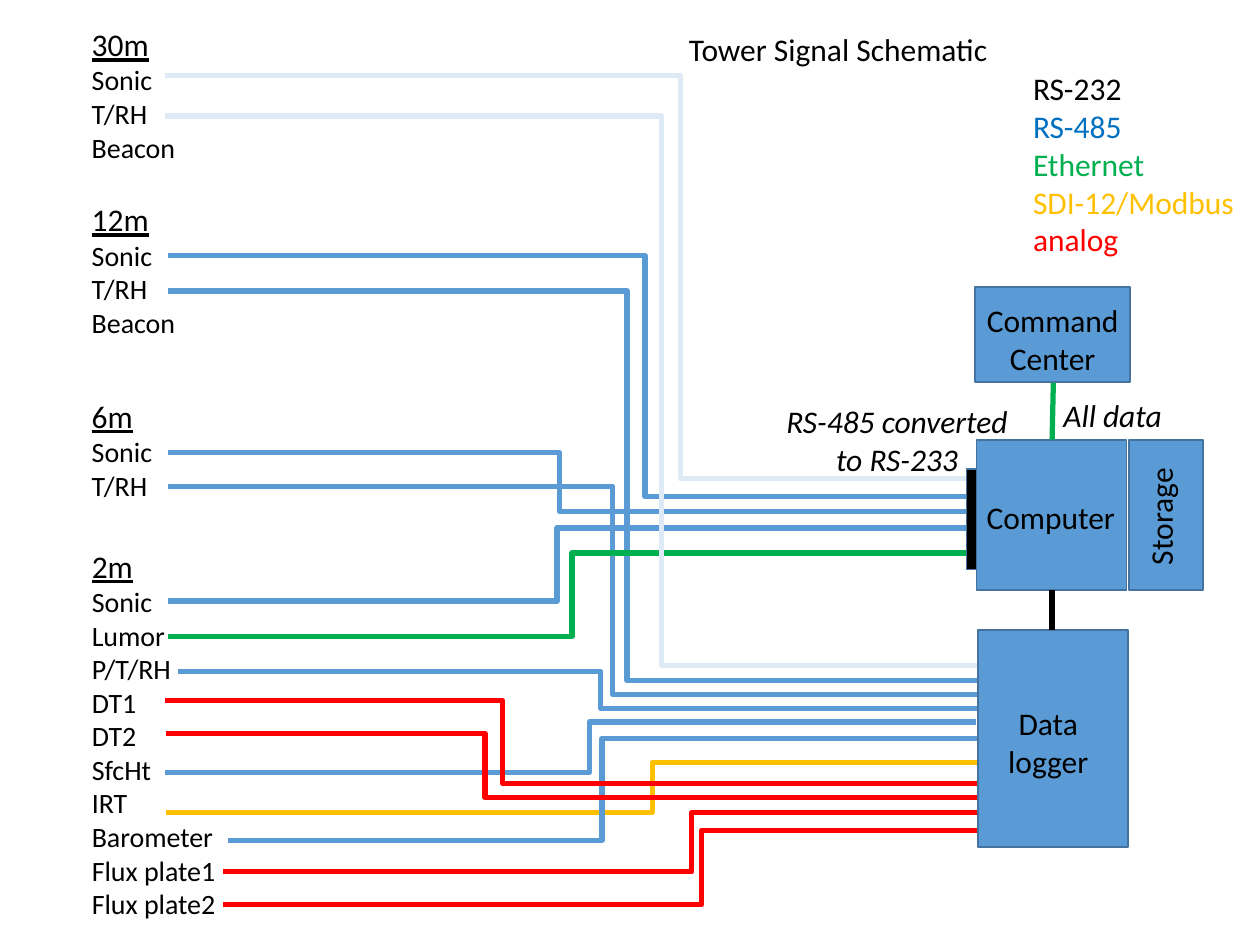
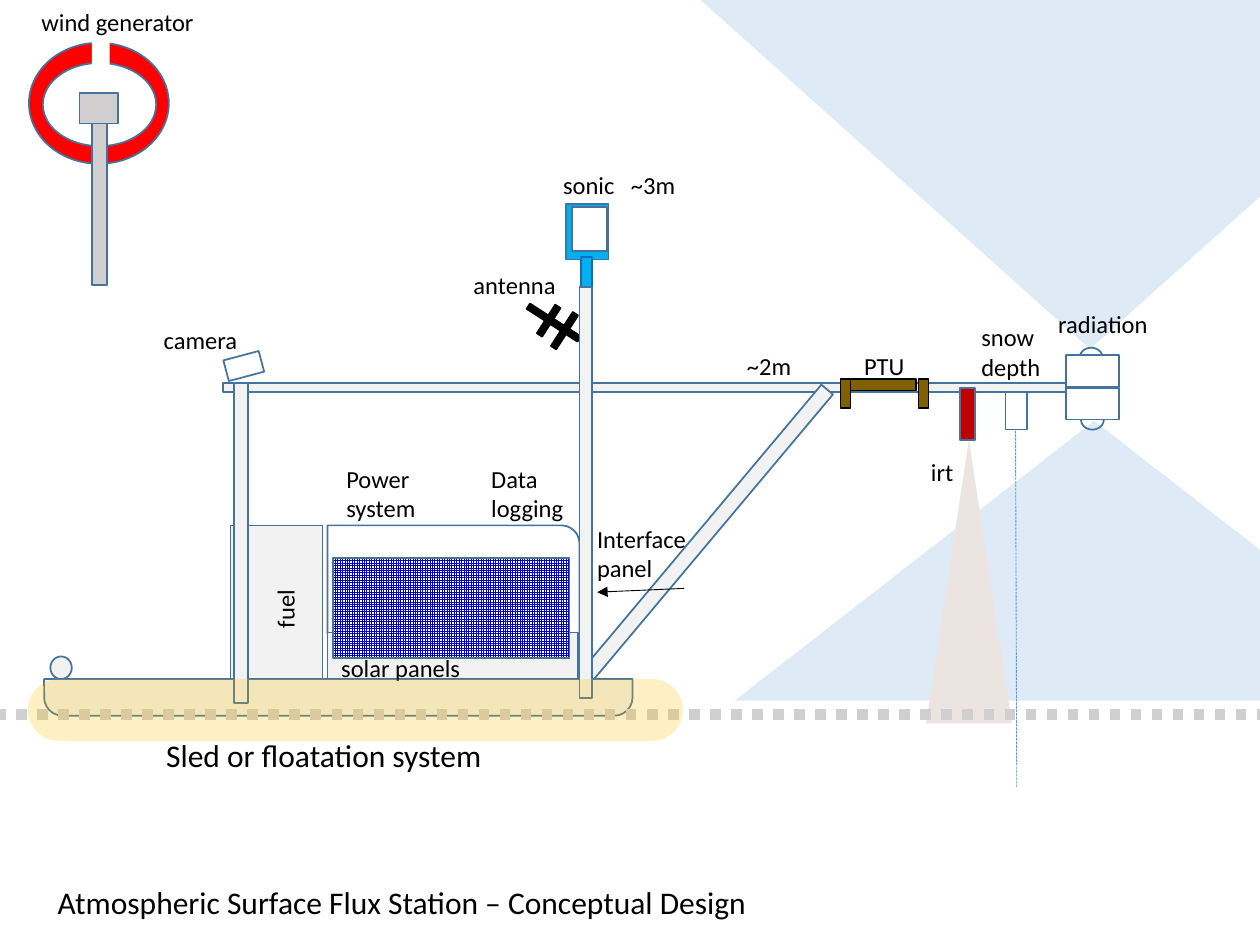
import collections
import pptx
import pptx.dml.color
import pptx.enum.dml
import pptx.enum.shapes
import pptx.enum.text
import pptx.oxml
import pptx.oxml.ns
import pptx.util

Inches = pptx.util.Inches
Pt = pptx.util.Pt
MSO = pptx.enum.shapes.MSO_SHAPE
DASH = pptx.enum.dml.MSO_LINE
CENTER = pptx.enum.text.PP_ALIGN.CENTER
FONT = "Calibri"
COLORS = {
    "black": "000000", "white": "FFFFFF", "blue": "5B9BD5", "edge": "43739E",
    "pale": "DEEBF7", "signal": "0070C0", "green": "00B050", "amber": "FFC000",
    "red": "FF0000", "steel": "F2F2F2", "gray": "D0CECE", "beam": "EBE4E1",
    "crimson": "C00000", "cyan": "00B0F0", "brown": "806000", "grid": "0000CC",
}
Region = collections.namedtuple("Region", "shapes left top")


def rgb(name):
    return pptx.dml.color.RGBColor.from_string(COLORS[name])


def add_xml(parent, tag, **attrs):
    el = pptx.oxml.parse_xml(f"<a:{tag} {pptx.oxml.ns.nsdecls('a')}/>")
    for key, value in attrs.items():
        el.set(key, value)
    parent.append(el)
    return el


def place(reg, x, y, w, h):
    return Inches(reg.left + x), Inches(reg.top + y), Inches(w), Inches(h)


def group(reg):
    return reg._replace(shapes=reg.shapes.add_group_shape().shapes)


def shape(reg, kind, box, fill=None, line="edge", rot=0, adj=()):
    sp = reg.shapes.add_shape(kind, *place(reg, *box))
    sp.shadow.inherit = False
    sp.rotation = rot
    for i, value in enumerate(adj):
        sp.adjustments[i] = value
    if fill:
        sp.fill.solid()
        sp.fill.fore_color.rgb = rgb(fill)
    else:
        sp.fill.background()
    if line:
        sp.line.color.rgb = rgb(line)
        sp.line.width = Pt(1)
    else:
        sp.line.fill.background()
    return sp


def label(reg, box, lines, size=14, wrap=False, align=None, italic=False, rot=0):
    sp = reg.shapes.add_textbox(*place(reg, *box))
    sp.rotation = rot
    tf = sp.text_frame
    tf.word_wrap = wrap
    tf.auto_size = pptx.enum.text.MSO_AUTO_SIZE.SHAPE_TO_FIT_TEXT
    for i, text in enumerate(lines):
        p = tf.add_paragraph() if i else tf.paragraphs[0]
        p.alignment = align
        r = p.add_run()
        r.text = text
        r.font.name = FONT
        r.font.size = Pt(size)
        r.font.italic = italic or None
        r.font.color.rgb = rgb("black")
    return tf


def connect(reg, x1, y1, x2, y2, color, width=3, bend=None, dash=None):
    kinds = pptx.enum.shapes.MSO_CONNECTOR
    kind = kinds.STRAIGHT if bend is None else kinds.ELBOW
    ends = (Inches(reg.left + x1), Inches(reg.top + y1),
            Inches(reg.left + x2), Inches(reg.top + y2))
    cx = reg.shapes.add_connector(kind, *ends)
    cx.line.color.rgb = rgb(color)
    cx.line.width = Pt(width)
    if dash:
        cx.line.dash_style = dash
    sp_pr = cx._element.spPr
    add_xml(sp_pr, "effectLst")
    if bend is not None:
        share = round((bend - x1) / (x2 - x1) * 100000)
        av = sp_pr.find(pptx.oxml.ns.qn("a:prstGeom")).get_or_add_avLst()
        add_xml(av, "gd", name="adj1", fmla=f"val {share}")
    return cx


def tower_levels(reg):
    levels = [
        (0, 0.87, ["30m", "Sonic", "T/RH", "Beacon"]),
        (1.39, 0.87, ["12m", "Sonic", "T/RH", "Beacon"]),
        (2.95, 0.7, ["6m", "Sonic", "T/RH"]),
        (4.14, 1.19, ["2m", "Sonic", "Lumor", "P/T/RH", "DT1", "DT2", "SfcHt",
                      "IRT", "Barometer", "Flux plate1", "Flux plate2"]),
    ]
    for y, w, lines in levels:
        h = 0.4 + 0.27 * (len(lines) - 1)
        tf = label(reg, (0, y, w, h), lines, 16)
        height = tf.paragraphs[0].runs[0].font
        height.size = Pt(18)
        height.underline = True


def signal_wires(reg):
    wires = [
        (0.02, 1.43, 3.81, 6.43, 3.34, "blue"),
        (0.02, 4.17, 3.11, 6.46, 3.59, "blue"),
        (0.02, 2.99, 3.13, 6.46, 3.46, "blue"),
        (0.02, 3.26, 3.55, 6.44, 4.91, "blue"),
        (0.02, 1.71, 3.67, 6.51, 4.8, "blue"),
        (0.1, 4.73, 3.46, 6.46, 5.02, "blue"),
        (0.02, 4.45, 3.23, 6.44, 3.79, "green"),
        (0.01, 5.85, 3.87, 6.46, 5.45, "amber"),
        (0, 5.53, 3.37, 6.44, 5.13, "blue"),
        (0.5, 6.07, 3.47, 6.45, 5.26, "blue"),
        (0.01, 5.22, 2.54, 6.46, 5.73, "red"),
        (0, 4.96, 2.68, 6.46, 5.62, "red"),
        (0.46, 6.58, 4.26, 6.46, 5.99, "red"),
        (0.46, 6.32, 4.18, 6.52, 5.85, "red"),
        (0, 0, 4.09, 6.44, 3.2, "pale"),
        (0, 0.32, 3.94, 6.46, 4.68, "pale"),
    ]
    for x1, y1, bend, x2, y2, color in wires:
        connect(reg, x1, y1, x2, y2, color, bend=bend)


def protocol_legend(reg):
    protocols = {"RS-232": "black", "RS-485": "signal", "Ethernet": "green",
                 "SDI-12/Modbus": "amber", "analog": "red"}
    tf = label(reg, (0, 0, 1.81, 1.62), protocols, 18)
    for p, color in zip(tf.paragraphs, protocols.values()):
        p.runs[0].font.color.rgb = rgb(color)


def equipment(reg):
    blocks = [
        ((1.62, 0, 1.23, 0.75), "blue"),
        ((1.63, 1.21, 1.19, 1.19), "blue"),
        ((1.64, 2.72, 1.19, 1.72), "blue"),
        ((1.55, 1.44, 0.08, 0.8), "black"),
        ((2.84, 1.21, 0.59, 1.19), "blue"),
    ]
    for box, fill in blocks:
        shape(reg, MSO.RECTANGLE, box, fill)
    connect(reg, 2.24, 0.76, 2.23, 1.21, "green")
    connect(reg, 2.23, 2.4, 2.23, 2.72, "black")
    captions = [
        ((1.61, 0.06, 1.25, 0.71), "Command Center", False, 0),
        ((1.59, 3.26, 1.22, 0.71), "Data logger", False, 0),
        ((2.12, 0.81, 1.18, 0.4), "All data", True, 0),
        ((1.53, 1.62, 1.38, 0.4), "Computer", False, 0),
        ((2.4, 1.62, 1.38, 0.4), "Storage", False, 270),
        ((0, 0.86, 2, 0.71), "RS-485 converted to RS-233", True, 0),
    ]
    for box, text, italic, rot in captions:
        label(reg, box, [text], 18, True, CENTER, italic, rot)


def radiation_cones(reg):
    shape(reg, MSO.ISOSCELES_TRIANGLE, (0.27, 3.34, 5.71, 2.22), "pale", None)
    shape(reg, MSO.ISOSCELES_TRIANGLE, (0, 0, 6.18, 2.77), "pale", None, 180)


def boom(reg):
    shape(reg, MSO.RECTANGLE, (0, 0, 6.69, 0.07), "steel")
    shape(reg, MSO.RECTANGLE, (2.29, 1.16, 3.05, 0.12), "steel", rot=310)
    label(reg, (4.06, -0.3, 0.56, 0.34), ["~2m"])


def sled(reg):
    shape(reg, MSO.ROUND_2_SAME_RECTANGLE, (0, 0.18, 4.67, 0.29), "steel",
          rot=180, adj=(0.5, 0))
    shape(reg, MSO.OVAL, (0.05, 0, 0.17, 0.18), "steel")
    label(reg, (0.87, 0.58, 2.82, 0.4), ["Sled or floatation system"], 18, True)


def cabin(reg):
    shape(reg, MSO.ROUND_1_RECTANGLE, (0.77, 0, 2, 0.86))
    shape(reg, MSO.RECTANGLE, (0.77, 0.85, 1.99, 0.37), "steel")
    panel = shape(reg, MSO.RECTANGLE, (0.81, 0.26, 1.88, 0.79))
    panel.fill.patterned()
    panel.fill.pattern = pptx.enum.dml.MSO_PATTERN.SMALL_GRID
    panel.fill.fore_color.rgb = rgb("grid")
    panel.fill.back_color.rgb = rgb("white")
    shape(reg, MSO.RECTANGLE, (0, 0, 0.73, 1.22), "steel")
    label(reg, (0.18, 0.49, 0.51, 0.34), ["fuel"], rot=270)
    for box, text in [
        ((0.78, 0.96, 1.64, 0.34), "solar panels"),
        ((0.82, -0.54, 0.98, 0.57), "Power system"),
        ((1.97, -0.54, 0.79, 0.57), "Data logging"),
        ((2.81, -0.06, 0.94, 0.57), "Interface panel"),
    ]:
        label(reg, box, [text], wrap=True)
    arrow = connect(reg, 3.6, 0.5, 2.91, 0.53, "black", 0.5)
    add_xml(arrow.line._get_or_add_ln(), "tailEnd", type="triangle")


def boom_sensors(reg):
    shape(reg, MSO.RECTANGLE, (1.31, 0.37, 0.17, 0.3))
    connect(reg, 1.39, 0.68, 1.4, 3.51, "blue", 0.5, dash=DASH.SQUARE_DOT)
    shape(reg, MSO.ISOSCELES_TRIANGLE, (0.68, 0.75, 0.68, 2.25), "beam", None)
    shape(reg, MSO.RECTANGLE, (0.95, 0.34, 0.12, 0.41), "crimson")
    shape(reg, MSO.OVAL, (1.91, 0.52, 0.18, 0.15))
    shape(reg, MSO.OVAL, (1.9, 0.02, 0.18, 0.15))
    for y in (0.34, 0.08):
        shape(reg, MSO.RECTANGLE, (1.79, y, 0.42, 0.25), "white")
    ptu = group(reg)
    for x, w, h in [(0.08, 0.52, 0.09), (0, 0.08, 0.23), (0.62, 0.08, 0.23)]:
        shape(ptu, MSO.RECTANGLE, (x, 0.27, w, h), "brown", "black")
    label(reg, (1.63, -0.34, 0.92, 0.34), ["radiation"])
    label(reg, (1.02, -0.23, 0.87, 0.57), ["snow depth"], wrap=True)
    label(reg, (0.09, 0, 0.53, 0.34), ["PTU"])
    label(reg, (0.62, 0.84, 0.38, 0.34), ["irt"])


def antenna(reg):
    parts = group(reg)
    for box in [(0.71, 0.23, 0.05, 0.48), (0.56, 0.43, 0.27, 0.05),
                (0.66, 0.51, 0.32, 0.05)]:
        shape(parts, MSO.RECTANGLE, box, "black", "black", 302.8)
    label(reg, (0, 0, 0.86, 0.34), ["antenna"])


def sonic_mast(reg):
    head = group(reg)
    shape(head, MSO.RECTANGLE, (0.12, 0.32, 0.34, 0.44), "cyan")
    shape(head, MSO.RECTANGLE, (0.17, 0.34, 0.28, 0.35), "white")
    shape(head, MSO.RECTANGLE, (0.24, 0.74, 0.09, 0.24), "cyan", "signal")
    shape(reg, MSO.RECTANGLE, (0.23, 0.98, 0.1, 3.26), "steel")
    label(reg, (0, 0, 0.61, 0.34), ["sonic"])
    label(reg, (0.54, 0, 0.56, 0.34), ["~3m"])


def camera_mast(reg):
    shape(reg, MSO.RECTANGLE, (0.59, 0.29, 0.29, 0.17), rot=345.1)
    shape(reg, MSO.RECTANGLE, (0.66, 0.51, 0.11, 2.54), "steel")
    label(reg, (0, 0, 0.79, 0.34), ["camera"])


def float_band(reg):
    sp = shape(reg, MSO.ROUND_2_SAME_RECTANGLE, (0, 0, 5.2, 0.49), "amber", None,
               180, (0.5, 0.5))
    clr = next(sp._element.spPr.iter(pptx.oxml.ns.qn("a:srgbClr")))
    add_xml(clr, "alpha", val="23000")


def wind_generator(reg):
    label(reg, (0, 0, 1.42, 0.34), ["wind generator"])
    shape(reg, MSO.OVAL, (0, 0.33, 1.11, 0.96), "red")
    shape(reg, MSO.OVAL, (0.11, 0.49, 0.9, 0.66), "white")
    shape(reg, MSO.RECTANGLE, (0.5, 0.32, 0.14, 0.28), "white", None)
    shape(reg, MSO.RECTANGLE, (0.5, 0.96, 0.12, 1.29), "gray")
    shape(reg, MSO.RECTANGLE, (0.4, 0.73, 0.31, 0.24), "gray")


def schematic_slide(shapes):
    tower_levels(Region(shapes, 0.63, 0.15))
    signal_wires(Region(shapes, 1.31, 0.6))
    protocol_legend(Region(shapes, 8.1, 0.5))
    label(Region(shapes, 5.37, 0.19), (0, 0, 2.6, 0.4),
          ["Tower Signal Schematic"], 18)
    equipment(Region(shapes, 6.12, 2.28))


def station_slide(shapes):
    radiation_cones(Region(shapes, 5.56, 0))
    boom(Region(shapes, 1.77, 3.04))
    sled(Region(shapes, 0.35, 5.21))
    boom_sensors(Region(shapes, 6.67, 2.74))
    antenna(Region(shapes, 3.66, 2.09))
    connect(Region(shapes, 0, 5.67), -0.04, 0, 10, 0, "gray", 6,
            dash=DASH.ROUND_DOT)
    cabin(Region(shapes, 1.83, 4.17))
    sonic_mast(Region(shapes, 4.37, 1.3))
    camera_mast(Region(shapes, 1.2, 2.53))
    float_band(Region(shapes, 0.22, 5.39))
    wind_generator(Region(shapes, 0.23, 0.01))
    label(Region(shapes, 0.36, 6.96), (0, 0, 6.24, 0.4),
          ["Atmospheric Surface Flux Station – Conceptual Design"], 18, True)


def main():
    prs = pptx.Presentation()
    prs.slide_width = Inches(10)
    prs.slide_height = Inches(7.5)
    for build in (schematic_slide, station_slide):
        build(prs.slides.add_slide(prs.slide_layouts[6]).shapes)
    prs.save("out.pptx")


if __name__ == "__main__":
    main()
